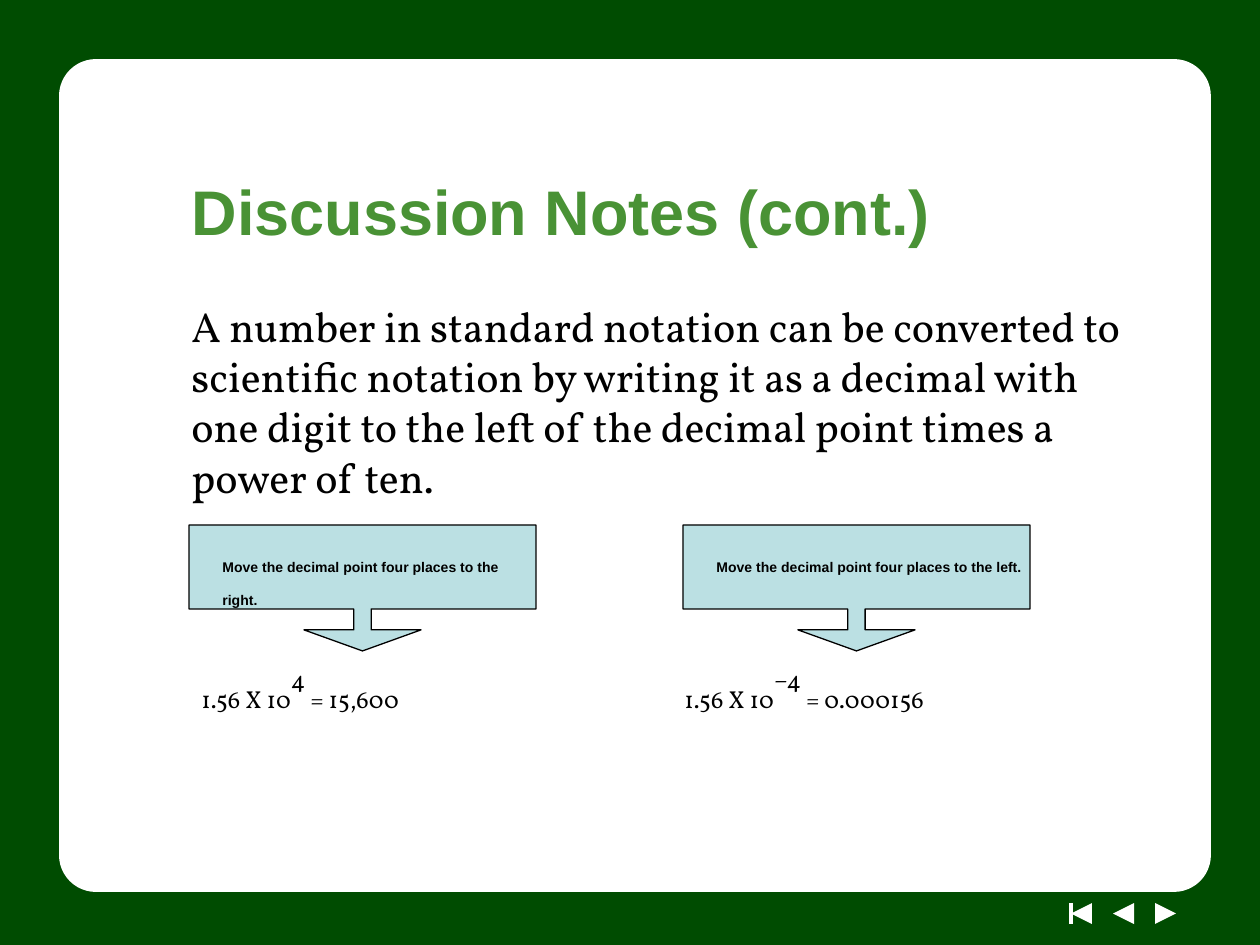
from pptx import Presentation
from pptx.dml.color import RGBColor
from pptx.enum.shapes import MSO_CONNECTOR as Link, MSO_SHAPE as Kind
from pptx.enum.text import MSO_ANCHOR as Anchor, MSO_AUTO_SIZE as Fit, PP_ALIGN as Align
from pptx.oxml.ns import qn
from pptx.util import Emu, Pt
from lxml import etree

SCALE = 914400 / 126
GREEN = RGBColor(0x00, 0x4C, 0x01)
LEAF = RGBColor(0x49, 0x92, 0x35)
AQUA = RGBColor(0xBB, 0xE0, 0xE3)
WHITE = RGBColor(0xFF, 0xFF, 0xFF)
BLACK = RGBColor(0x00, 0x00, 0x00)
SANS, SERIF = "Arial", "Vollkorn"

BODY = ("A number in standard notation can be converted to scientific notation "
        "by writing it as a decimal with one digit to the left of the decimal "
        "point times a power of ten.")


def px(num):
    return Emu(round(num * SCALE))


def style(font, face, size, color=BLACK, bold=False):
    font.name, font.size, font.bold = face, Pt(size), bold
    font.color.rgb = color


def add_shape(slide, kind, box, fill, line=None, width=0.75, adj=(), turn=0):
    shape = slide.shapes.add_shape(kind, *map(px, box))
    shape.shadow.inherit = False
    shape.fill.solid()
    shape.fill.fore_color.rgb = fill
    if line is None:
        shape.line.fill.background()
    else:
        shape.line.color.rgb = line
        shape.line.width = Pt(width)
    for i, val in enumerate(adj):
        shape.adjustments[i] = val
    shape.rotation = turn
    return shape


def add_line(slide, start, end, color, width):
    line = slide.shapes.add_connector(Link.STRAIGHT, *map(px, start + end))
    line.line.color.rgb = color
    line.line.width = Pt(width)
    etree.SubElement(line.element.spPr, qn("a:effectLst"))


def add_text(slide, box, text=""):
    frame = slide.shapes.add_textbox(*map(px, box)).text_frame
    frame.word_wrap = True
    para = frame.paragraphs[0]
    para.text = text
    return para


def add_note(slide, left, side):
    add_shape(slide, Kind.DOWN_ARROW_CALLOUT, (left, 525, 347, 126), AQUA, BLACK,
              adj=(0.138, 0.465, 0.167, 0.667))
    para = add_text(slide, (left + 21, 536, 336, 72),
                    f"Move the decimal point four places to the {side}.")
    para.line_spacing = Pt(19)
    style(para.font, SANS, 8, bold=True)


def add_sum(slide, left, width, power, value):
    para = add_text(slide, (left, 651, width, 63))
    para.line_spacing = Pt(34)
    # The raised run is drawn smaller, so it starts from a larger size
    for text, size, rise in (("1.56 X 10", 14, 0), (power + " ", 24, 48),
                             ("= " + value, 14, 0)):
        run = para.add_run()
        run.text = text
        style(run.font, SERIF, size)
        if rise:
            run.font._element.set("baseline", str(rise * 1000))


def add_frame(slide):
    add_shape(slide, Kind.RECTANGLE, (0, 0, 1260, 945), GREEN)
    # Navigation marks
    for left, turn in ((1155, 90), (1113, 270), (1071, 270)):
        add_shape(slide, Kind.ISOSCELES_TRIANGLE, (left, 903, 21, 21), WHITE, turn=turn)
    add_line(slide, (1071, 903), (1071, 924), WHITE, 2)
    # Content panel
    add_shape(slide, Kind.ROUNDED_RECTANGLE, (63, 63, 1144, 825), WHITE, WHITE, 4.5,
              adj=(0.04,))


def set_title(slide, text):
    title = slide.shapes.title
    # Bring the title in front of the panel
    title.element.getparent().append(title.element)
    title.left, title.top, title.width, title.height = map(px, (179, 147, 1018, 126))
    frame = title.text_frame
    frame.text = text
    frame.auto_size = Fit.NONE
    frame.vertical_anchor = Anchor.MIDDLE
    para = frame.paragraphs[0]
    para.alignment = Align.LEFT
    style(para.font, SANS, 36, LEAF, True)


def main():
    deck = Presentation()
    deck.slide_width, deck.slide_height = px(1260), px(945)
    slide = deck.slides.add_slide(deck.slide_layouts[5])

    add_frame(slide)
    set_title(slide, "Discussion Notes (cont.)")

    # Body text
    para = add_text(slide, (179, 294, 987, 504), BODY)
    style(para.font, SERIF, 24)

    # Worked examples
    add_sum(slide, 189, 378, "4", "15,600")
    add_sum(slide, 672, 473, "–4", "0.000156")
    add_note(slide, 189, "right")
    add_note(slide, 683, "left")

    deck.save("out.pptx")


if __name__ == "__main__":
    main()
